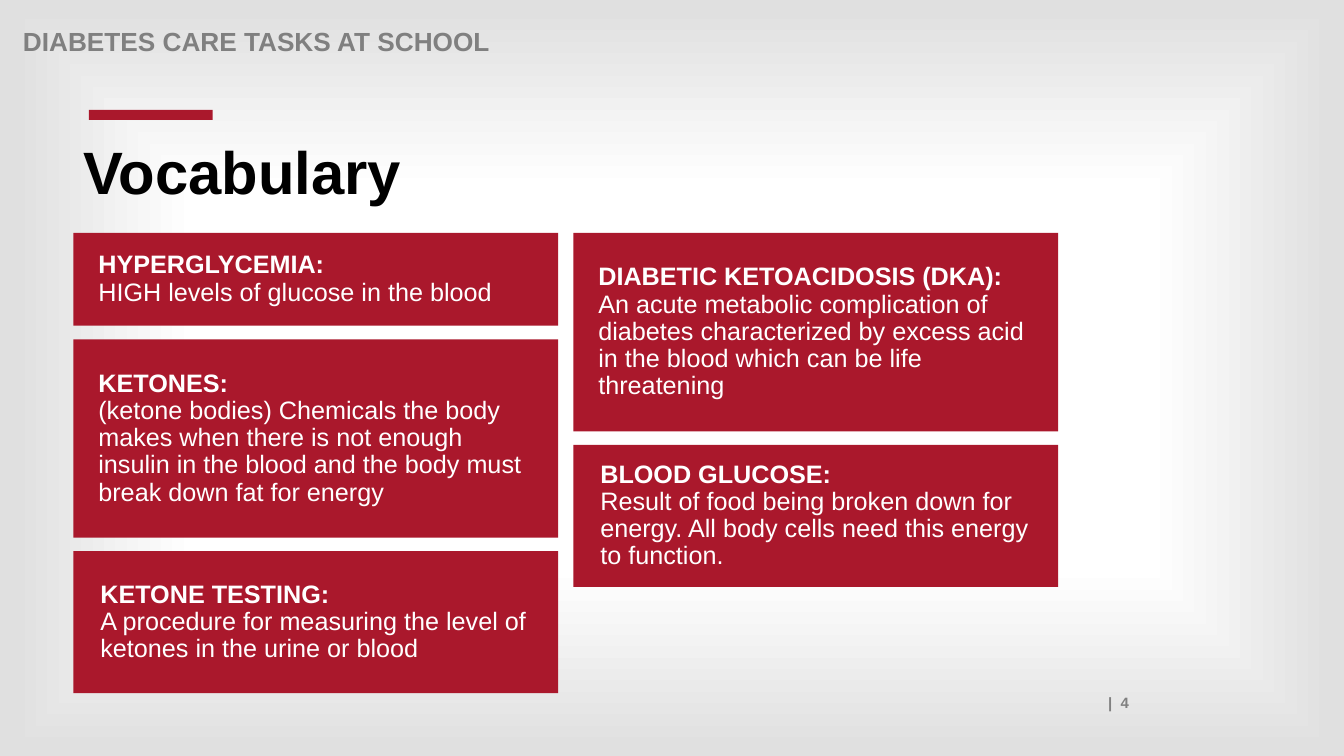
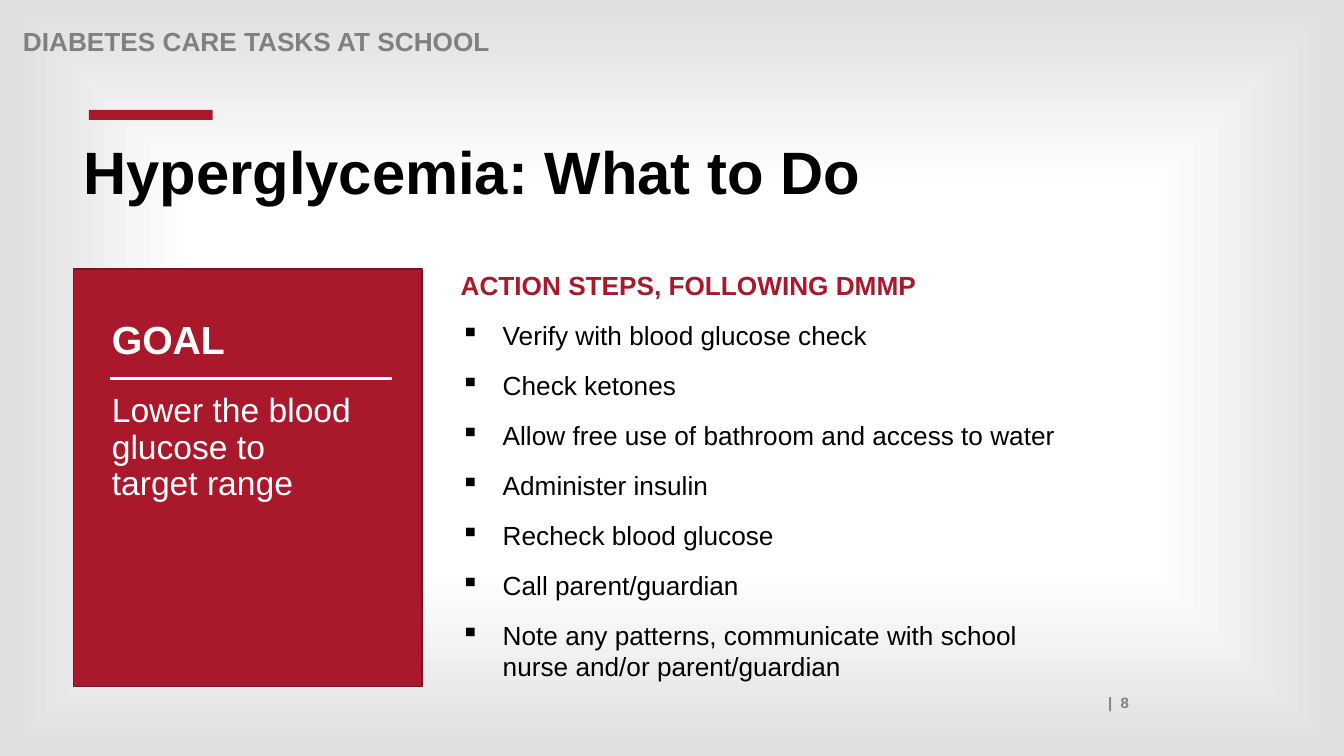
"""Build two slides about diabetes care tasks at school."""

from dataclasses import dataclass
from typing import NamedTuple

from lxml.etree import SubElement
from pptx import Presentation
from pptx.dml.color import RGBColor
from pptx.enum.shapes import MSO_CONNECTOR, MSO_SHAPE
from pptx.enum.text import MSO_ANCHOR, PP_ALIGN
from pptx.oxml.ns import qn
from pptx.presentation import Presentation as Deck
from pptx.shapes.autoshape import Shape
from pptx.slide import Slide
from pptx.text.text import TextFrame, _Paragraph as Paragraph
from pptx.util import Cm, Pt


@dataclass(frozen=True)
class Theme:
    """Colours and type sizes shared by the slides."""

    font: str = "Arial"
    red: RGBColor = RGBColor(0xAA, 0x18, 0x2C)
    dark_red: RGBColor = RGBColor(0x7E, 0x12, 0x21)
    grey: RGBColor = RGBColor(0x80, 0x80, 0x80)
    edge: RGBColor = RGBColor(0xE0, 0xE0, 0xE0)
    white: RGBColor = RGBColor(0xFF, 0xFF, 0xFF)
    black: RGBColor = RGBColor(0x00, 0x00, 0x00)
    title: float = 42.7
    goal_heading: float = 28
    goal: float = 24
    body: float = 18.7
    card: float = 18
    footer: float = 10.7
    tight: float = 0.9


class Box(NamedTuple):
    """A rectangle in centimetres."""

    left: float
    top: float
    width: float
    height: float


class Card(NamedTuple):
    """A vocabulary term with its definition."""

    term: str
    definition: str
    height: float
    inset: float = 0.63


THEME = Theme()
HEADER = "DIABETES CARE TASKS AT SCHOOL"
CARD_COLUMNS = (
    (
        Card("HYPERGLYCEMIA:", "HIGH levels of glucose in the blood", 2.34),
        Card(
            "KETONES:",
            "(ketone bodies) Chemicals the body makes when there is not enough "
            "insulin in the blood and the body must break down fat for energy",
            5,
        ),
        Card(
            "KETONE TESTING:",
            "A procedure for measuring the level of ketones in the urine or blood",
            3.58,
            0.68,
        ),
    ),
    (
        Card(
            "DIABETIC KETOACIDOSIS (DKA):",
            "An acute metabolic complication of diabetes characterized by excess "
            "acid in the blood which can be life threatening",
            5,
        ),
        Card(
            "BLOOD GLUCOSE:",
            "Result of food being broken down for energy. All body cells need "
            "this energy to function.",
            3.58,
            0.68,
        ),
    ),
)
ACTION_STEPS = (
    "Verify with blood glucose check",
    "Check ketones",
    "Allow free use of bathroom and access to water",
    "Administer insulin",
    "Recheck blood glucose",
    "Call parent/guardian",
    "Note any patterns, communicate with school nurse and/or parent/guardian",
)


def write_text(
    paragraph: Paragraph,
    text: str,
    *,
    size: float,
    color: RGBColor,
    bold: bool = False,
    line_spacing: float = 1.0,
    align: PP_ALIGN = PP_ALIGN.LEFT,
) -> None:
    """Append a formatted run to a paragraph."""
    paragraph.alignment = align
    paragraph.line_spacing = line_spacing
    run = paragraph.add_run()
    run.text = text
    run.font.name = THEME.font
    run.font.size = Pt(size)
    run.font.bold = bold
    run.font.color.rgb = color


def add_frame(slide: Slide, box: Box) -> TextFrame:
    """Add a wrapping text box and return its frame."""
    frame = slide.shapes.add_textbox(*map(Cm, box)).text_frame
    frame.word_wrap = True
    return frame


def add_panel(slide: Slide, box: Box) -> Shape:
    """Add a flat red rectangle without an outline."""
    shape = slide.shapes.add_shape(MSO_SHAPE.RECTANGLE, *map(Cm, box))
    shape.shadow.inherit = False
    shape.fill.solid()
    shape.fill.fore_color.rgb = THEME.red
    shape.line.fill.background()
    return shape


def add_bullet(paragraph: Paragraph, hanging: float) -> None:
    """Give a paragraph a square bullet and a hanging indent."""
    properties = paragraph._p.get_or_add_pPr()
    properties.set("marL", str(Cm(hanging)))
    properties.set("indent", str(-Cm(hanging)))
    SubElement(properties, qn("a:buChar"), char="▪")


def set_background(presentation: Deck) -> None:
    """Fill the master with a gradient from a white centre to grey edges."""
    master = presentation.slide_master
    fill = master.background.fill
    fill.gradient()
    stops = zip(fill.gradient_stops, ((0.5, THEME.white), (0.98, THEME.edge)))
    for stop, (position, color) in stops:
        stop.position = position
        stop.color.rgb = color
    gradient = master.element.find(f".//{qn('a:gradFill')}")
    gradient.remove(gradient.find(qn("a:lin")))
    shading = SubElement(gradient, qn("a:path"), path="shape")
    SubElement(
        shading, qn("a:fillToRect"), l="50000", t="50000", r="50000", b="50000"
    )


def add_base_slide(presentation: Deck, title: str, number: int) -> Slide:
    """Add a slide with the header, accent bar, title and page number."""
    slide = presentation.slides.add_slide(presentation.slide_layouts[6])
    write_text(
        add_frame(slide, Box(3.07, 17.35, 25.63, 0.71)).paragraphs[0],
        f"|  {number}",
        size=THEME.footer,
        color=THEME.grey,
        bold=True,
        align=PP_ALIGN.RIGHT,
    )
    write_text(
        add_frame(slide, Box(0.33, 0.61, 27.94, 0.71)).paragraphs[0],
        HEADER,
        size=THEME.body,
        color=THEME.grey,
        bold=True,
        line_spacing=THEME.tight,
    )
    add_panel(slide, Box(2.24, 2.77, 3.12, 0.25))
    write_text(
        add_frame(slide, Box(1.85, 3.48, 28.02, 3.3)).paragraphs[0],
        title,
        size=THEME.title,
        color=THEME.black,
        bold=True,
        line_spacing=THEME.tight,
    )
    return slide


def add_card(slide: Slide, card: Card, box: Box) -> None:
    """Draw a vocabulary card with its term above its definition."""
    frame = add_panel(slide, box).text_frame
    frame.word_wrap = True
    frame.vertical_anchor = MSO_ANCHOR.MIDDLE
    frame.margin_left = Cm(card.inset)
    frame.margin_right = Cm(1.24 - card.inset)
    paragraph = frame.paragraphs[0]
    style = dict(size=THEME.card, color=THEME.white, line_spacing=THEME.tight)
    write_text(paragraph, card.term, bold=True, **style)
    paragraph.add_line_break()
    write_text(paragraph, card.definition, **style)


def add_vocabulary_slide(presentation: Deck) -> None:
    """Stack the vocabulary cards in two columns."""
    slide = add_base_slide(presentation, "Vocabulary", 4)
    width, column_pitch, row_gap = 12.22, 12.6, 0.34
    for column, cards in enumerate(CARD_COLUMNS):
        top = 5.87
        for card in cards:
            left = 1.85 + column * column_pitch
            add_card(slide, card, Box(left, top, width, card.height))
            top += card.height + row_gap


def add_goal(slide: Slide) -> None:
    """Draw the goal panel with its heading, rule and statement."""
    panel = add_panel(slide, Box(1.85, 6.78, 8.79, 10.52))
    panel.line.color.rgb = THEME.dark_red
    panel.line.width = Pt(1)
    lines = (
        ("GOAL", 7.95, THEME.goal_heading, True),
        ("Lower the blood glucose to target range", 9.8, THEME.goal, False),
    )
    for text, top, size, bold in lines:
        write_text(
            add_frame(slide, Box(2.57, top, 6.75, 2.34)).paragraphs[0],
            text,
            size=size,
            color=THEME.white,
            bold=bold,
            line_spacing=THEME.tight,
        )
    rule = slide.shapes.add_connector(
        MSO_CONNECTOR.STRAIGHT, Cm(2.77), Cm(9.53), Cm(9.88), Cm(9.53)
    )
    rule.line.color.rgb = THEME.white
    rule.line.width = Pt(2)
    SubElement(rule._element.spPr, qn("a:effectLst"))


def add_action_slide(presentation: Deck) -> None:
    """Show the goal beside the list of action steps."""
    slide = add_base_slide(presentation, "Hyperglycemia: What to Do", 8)
    add_goal(slide)
    frame = add_frame(slide, Box(11.61, 6.78, 15.01, 10.41))
    frame.margin_left = frame.margin_right = Cm(0)
    frame.margin_top = frame.margin_bottom = Cm(0)
    write_text(
        frame.paragraphs[0],
        "ACTION STEPS, FOLLOWING DMMP",
        size=THEME.body,
        color=THEME.red,
        bold=True,
    )
    for step in ACTION_STEPS:
        paragraph = frame.add_paragraph()
        add_bullet(paragraph, 1.06)
        paragraph.space_before = Pt(13.3)
        write_text(paragraph, step, size=THEME.body, color=THEME.black)


def main() -> None:
    """Build and save the presentation."""
    presentation = Presentation()
    presentation.slide_width = Cm(33.87)
    presentation.slide_height = Cm(19.05)
    set_background(presentation)
    add_vocabulary_slide(presentation)
    add_action_slide(presentation)
    presentation.save("out.pptx")


if __name__ == "__main__":
    main()
